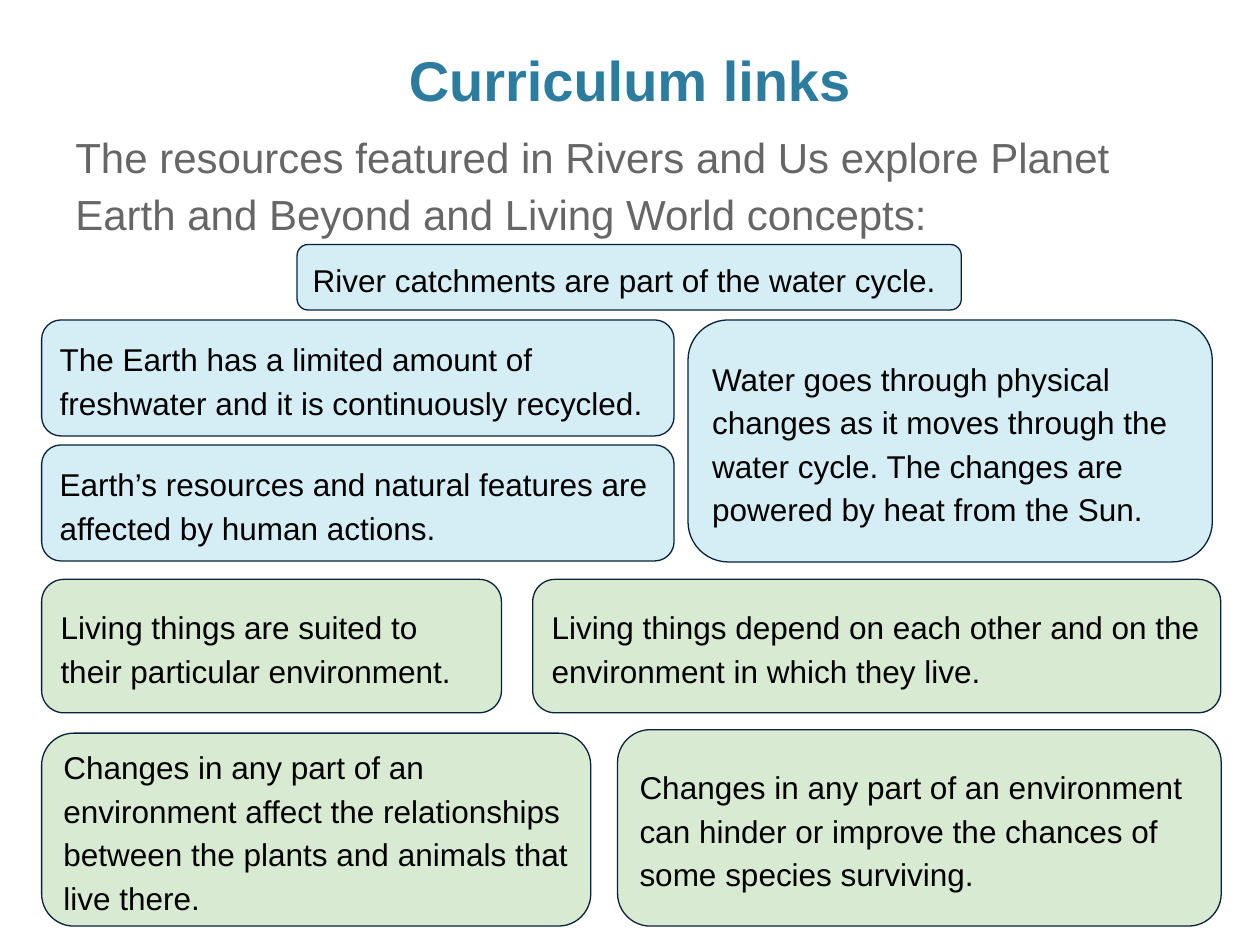
from dataclasses import dataclass

from pptx import Presentation
from pptx.dml.color import RGBColor
from pptx.enum.shapes import MSO_SHAPE
from pptx.enum.text import MSO_ANCHOR, PP_ALIGN
from pptx.util import Cm, Pt


@dataclass(frozen=True)
class Theme:
    font: str = "Arial"
    title: RGBColor = RGBColor(0x2C, 0x7C, 0x9F)
    intro: RGBColor = RGBColor(0x66, 0x66, 0x66)
    text: RGBColor = RGBColor(0, 0, 0)
    earth: RGBColor = RGBColor(0xD5, 0xED, 0xF4)
    living: RGBColor = RGBColor(0xD9, 0xEA, 0xD3)
    line: RGBColor = RGBColor(0x09, 0x21, 0x3B)
    title_size: int = Pt(32)
    intro_size: int = Pt(24)
    text_size: int = Pt(18)


theme = Theme()


def write(sp, text, size, color, bold=False, frame=None, para=None):
    """Put one formatted paragraph in a shape."""
    tf = sp.text_frame
    frame_format = dict(word_wrap=True, margin_left=Cm(0.25), margin_right=Cm(0.25),
                        margin_top=Cm(0.25), margin_bottom=Cm(0.25),
                        vertical_anchor=MSO_ANCHOR.MIDDLE)
    for name, value in (frame_format | (frame or {})).items():
        setattr(tf, name, value)
    p = tf.paragraphs[0]
    para_format = dict(alignment=PP_ALIGN.LEFT, line_spacing=1.15)
    for name, value in (para_format | (para or {})).items():
        setattr(p, name, value)
    r = p.add_run()
    r.text = text
    for name, value in dict(name=theme.font, size=size, bold=bold).items():
        setattr(r.font, name, value)
    r.font.color.rgb = color


prs = Presentation()
prs.slide_width, prs.slide_height = Cm(25.4), Cm(19.05)
s = prs.slides.add_slide(prs.slide_layouts[6])

# Introduction
sp = s.shapes.add_textbox(Cm(1.27), Cm(2.24), Cm(22.6), Cm(2.7))
write(sp, "The resources featured in Rivers and Us explore Planet Earth and Beyond "
      "and Living World concepts:", theme.intro_size, theme.intro,
      frame=dict(vertical_anchor=MSO_ANCHOR.TOP), para=dict(space_after=Pt(18)))

# Title
sp = s.shapes.add_textbox(Cm(1.27), Cm(0), Cm(22.86), Cm(3.18))
write(sp, "Curriculum links", theme.title_size, theme.title, bold=True,
      frame=dict(margin_top=Cm(0.13), margin_bottom=Cm(0.13)),
      para=dict(alignment=PP_ALIGN.CENTER, line_spacing=1.0))

# Concept cards: left, top, width, height in cm, then the wording
left = 0.84
cards = {
    theme.earth: [
        (left, 6.45, 12.75, 2.34,
         "The Earth has a limited amount of freshwater and it is continuously recycled."),
        (13.87, 6.45, 10.57, 4.88,
         "Water goes through physical changes as it moves through the water cycle. "
         "The changes are powered by heat from the Sun."),
        (5.99, 4.93, 13.39, 1.32, "River catchments are part of the water cycle."),
        (left, 8.97, 12.75, 2.34,
         "Earth’s resources and natural features are affected by human actions."),
    ],
    theme.living: [
        (left, 11.68, 9.27, 2.69,
         "Living things are suited to their particular environment."),
        (10.74, 11.68, 13.87, 2.69,
         "Living things depend on each other and on the environment in which they live."),
        (left, 14.78, 11.07, 3.89,
         "Changes in any part of an environment affect the relationships between "
         "the plants and animals that live there."),
        (12.45, 14.71, 12.17, 3.96,
         "Changes in any part of an environment can hinder or improve the chances "
         "of some species surviving."),
    ],
}
for fill, group in cards.items():
    for *box, text in group:
        sp = s.shapes.add_shape(MSO_SHAPE.ROUNDED_RECTANGLE, *map(Cm, box))
        sp.shadow.inherit = False
        sp.fill.solid()
        sp.fill.fore_color.rgb = fill
        sp.line.color.rgb = theme.line
        sp.line.width = Pt(0.75)
        write(sp, text, theme.text_size, theme.text)

prs.save("out.pptx")
